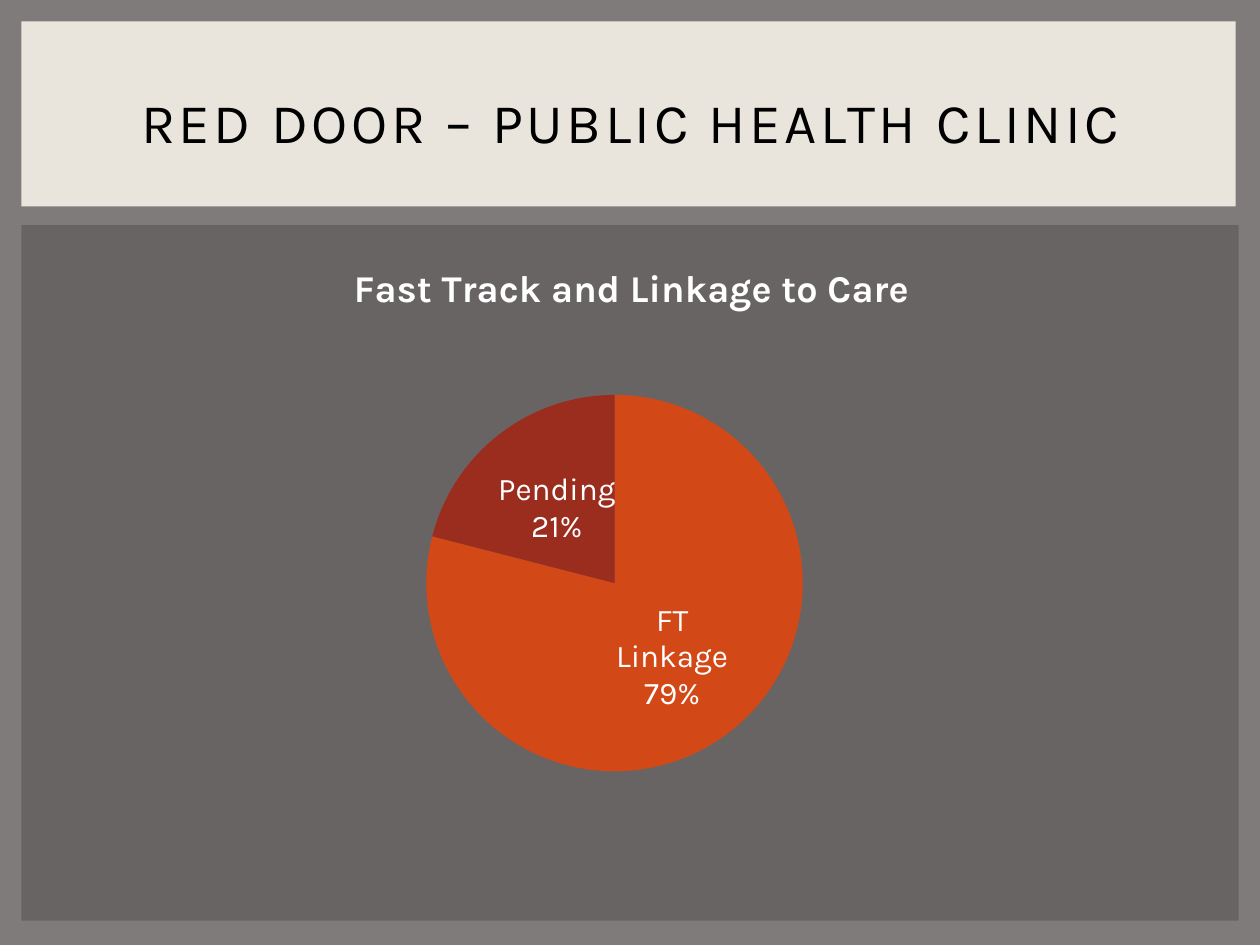
from lxml import etree
from pptx import Presentation
from pptx.chart.data import CategoryChartData
from pptx.dml.color import RGBColor
from pptx.enum.chart import XL_CHART_TYPE, XL_LABEL_POSITION
from pptx.enum.shapes import MSO_SHAPE
from pptx.enum.text import MSO_ANCHOR, PP_ALIGN
from pptx.oxml import parse_xml
from pptx.oxml.ns import nsdecls
from pptx.util import Cm, Pt

PIE = XL_CHART_TYPE.PIE
LABEL_CENTER = XL_LABEL_POSITION.CENTER
RECT = MSO_SHAPE.RECTANGLE
MIDDLE = MSO_ANCHOR.MIDDLE
CENTER = PP_ALIGN.CENTER

FONT = "Karla"
COLORS = {
    "background": "807B7B",
    "panel": "696464",
    "banner": "E9E5DC",
    "title": "000000",
    "chart_text": "FFFFFF",
    "FT Linkage": "D34817",
    "Pending": "9B2D1F",
}


def rgb(name):
    return RGBColor.from_string(COLORS[name])


def write(tf, text, size, color, bold=False, spacing=None):
    """Put one centred, formatted run into a text frame; spacing is in points."""
    p = tf.paragraphs[0]
    p.alignment = CENTER
    r = p.add_run()
    r.text = text
    r.font.name = FONT
    r.font.size = Pt(size)
    r.font.bold = bold
    r.font.color.rgb = rgb(color)
    if spacing is not None:
        r.font._element.set("spc", str(spacing * 100))


prs = Presentation()
prs.slide_width, prs.slide_height = Cm(25.4), Cm(19.05)
s = prs.slides.add_slide(prs.slide_layouts[5])
s.background.fill.solid()
s.background.fill.fore_color.rgb = rgb("background")

# Panel and banner
for color, top, width, height in (
    ("panel", 4.54, 24.54, 14.02),
    ("banner", 0.43, 24.48, 3.73),
):
    sp = s.shapes.add_shape(RECT, Cm(0.43), Cm(top), Cm(width), Cm(height))
    sp.shadow.inherit = False
    sp.fill.solid()
    sp.fill.fore_color.rgb = rgb(color)
    sp.line.fill.background()

# Pie chart
data = CategoryChartData()
data.categories = ["FT Linkage", "Pending"]
data.add_series("Series 1", (79, 21))
chart = s.shapes.add_chart(
    PIE, Cm(1.07), Cm(4.78), Cm(23.34), Cm(12.24), data
).chart
chart.has_legend = False
chart.font.name = FONT
chart.font.size = Pt(18)
chart.font.color.rgb = rgb("chart_text")
chart.has_title = True
write(chart.chart_title.text_frame, "Fast Track and Linkage to Care", 21.6,
      "chart_text", bold=True)

plot = chart.plots[0]
plot.vary_by_categories = True
for i, category in enumerate(plot.categories):
    fill = plot.series[0].points[i].format.fill
    fill.solid()
    fill.fore_color.rgb = rgb(category)
plot.has_data_labels = True
labels = plot.data_labels
labels.show_category_name = True
labels.show_percentage = True
labels.show_value = False
labels.position = LABEL_CENTER
labels.font.name = FONT
labels.font.size = Pt(18)
labels.font.color.rgb = rgb("chart_text")
separator = parse_xml(f"<c:separator {nsdecls('c')}>\n</c:separator>")
labels._element.find("{*}showBubbleSize").addnext(separator)

# Pie position as fractions of the chart area
plot_area = chart._chartSpace.chart.plotArea
for old in plot_area.findall("{*}layout"):
    plot_area.remove(old)
layout = parse_xml(
    f"<c:layout {nsdecls('c')}><c:manualLayout>"
    '<c:layoutTarget val="inner"/><c:xMode val="edge"/><c:yMode val="edge"/>'
    "</c:manualLayout></c:layout>"
)
for tag, value in (("x", 0.32), ("y", 0.26), ("w", 0.33), ("h", 0.62)):
    etree.SubElement(layout[0], layout.tag.replace("layout", tag), val=str(value))
plot_area.insert(0, layout)

# Title, in front of the banner
title = s.shapes.title
s.shapes._spTree.append(title._element)
title.left, title.top, title.width, title.height = Cm(1.07), Cm(0.99), Cm(23.29), Cm(2.92)
title.text_frame.vertical_anchor = MIDDLE
title.text_frame.word_wrap = True
write(title.text_frame, "RED DOOR – PUBLIC HEALTH CLINIC", 32, "title", spacing=2)

prs.save("out.pptx")
